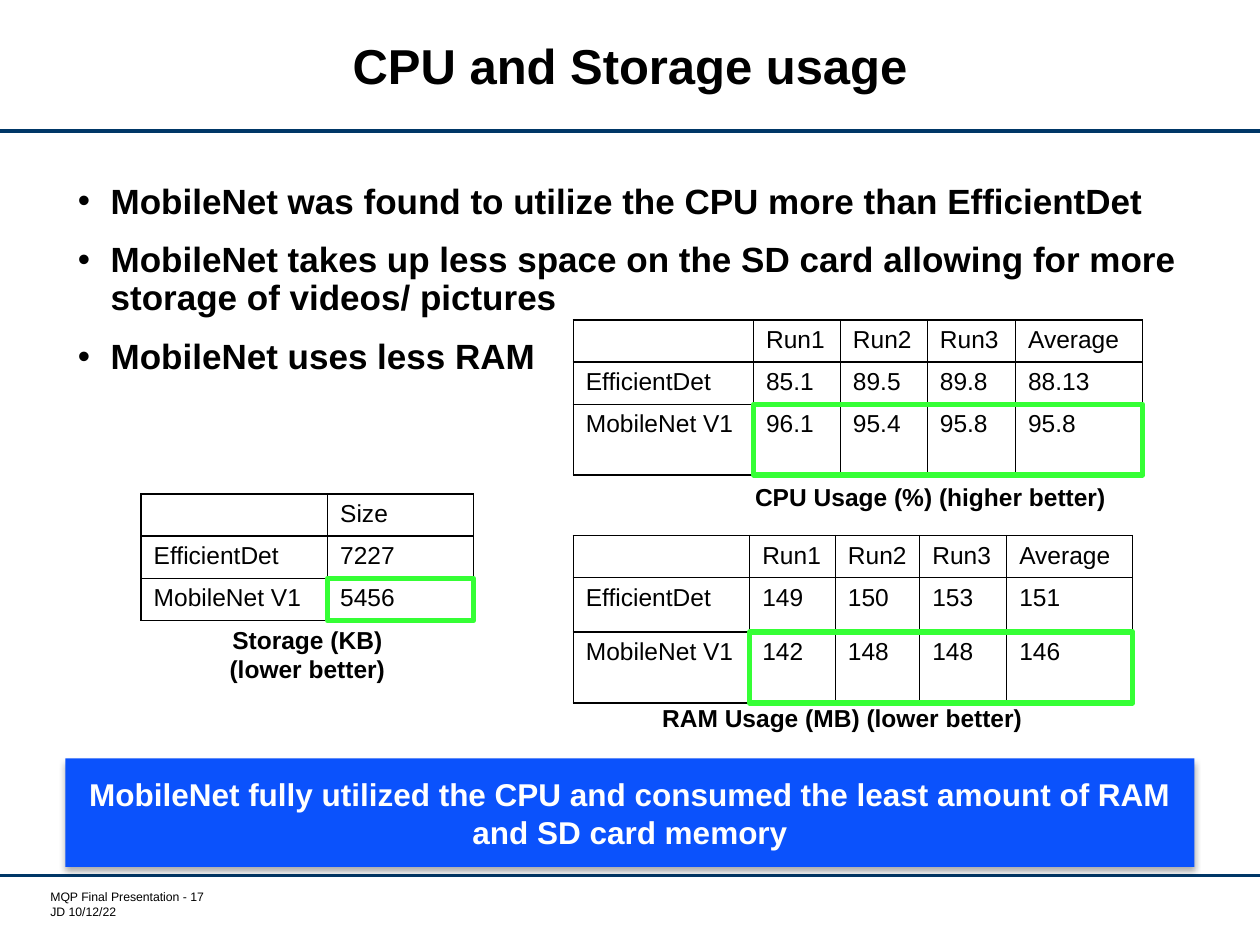
from dataclasses import dataclass
from lxml import etree
from pptx import Presentation
from pptx import util as u
from pptx.dml.color import RGBColor
from pptx.enum import shapes, text
from pptx.oxml import parse_xml
from pptx.oxml.ns import qn

COLS, ROWS = 100, 75
NS = 'xmlns:a="http://schemas.openxmlformats.org/drawingml/2006/main"'
BLACK, WHITE, NAVY, BLUE, GREEN = "000000", "FFFFFF", "003767", "0B52FC", "35FF35"
LEFT, MID = text.PP_ALIGN.LEFT, text.PP_ALIGN.CENTER

deck = Presentation()
deck.slide_width, deck.slide_height = u.Inches(10), u.Inches(7.5)
slide = deck.slides.add_slide(deck.slide_layouts[5])


@dataclass
class Box:
    x: float
    y: float
    w: float
    h: float

    def emu(self) -> list[int]:
        wide, high = deck.slide_width / COLS, deck.slide_height / ROWS
        return [round(self.x * wide), round(self.y * high),
                round(self.w * wide), round(self.h * high)]


@dataclass
class Grid:
    x: float
    y: float
    cols: list[float]
    rows: list[float]
    head: list[str]
    data: list[list[str]]

    def box(self) -> Box:
        return Box(self.x, self.y, sum(self.cols), sum(self.rows))

    def best(self) -> Box:
        return Box(self.x + self.cols[0], self.y + sum(self.rows[:-1]),
                   sum(self.cols[1:]), self.rows[-1])


@dataclass
class Label:
    box: Box
    lines: list[str]


def tint(code: str) -> RGBColor:
    return RGBColor.from_string(code)


def add_run(para, words: str, size: float, bold: bool = False, code: str = BLACK) -> None:
    run = para.add_run()
    run.text = words
    run.font.name, run.font.size, run.font.bold = "Arial", u.Pt(size), bold
    run.font.color.rgb = tint(code)


def write(frame, lines: list[str], size: float, bold: bool = True,
          code: str = BLACK, side=MID) -> list:
    frame.word_wrap = True
    paras = [frame.paragraphs[0]] + [frame.add_paragraph() for _ in lines[1:]]
    for para, words in zip(paras, lines):
        para.alignment = side
        add_run(para, words, size, bold, code)
    return paras


def add_text(box: Box, lines: list[str], size: float, **look):
    frame = slide.shapes.add_textbox(*box.emu()).text_frame
    return frame, write(frame, lines, size, **look)


def add_rule(row: float) -> None:
    x, y, w, _ = Box(0, row, COLS, 0).emu()
    rule = slide.shapes.add_connector(shapes.MSO_CONNECTOR.STRAIGHT, x, y, x + w, y)
    rule.line.color.rgb, rule.line.width = tint(NAVY), u.Pt(1.75)
    etree.SubElement(rule._element.spPr, qn("a:effectLst"))


def add_rect(box: Box):
    rect = slide.shapes.add_shape(shapes.MSO_SHAPE.RECTANGLE, *box.emu())
    rect.shadow.inherit = False
    return rect


def add_edges(cell) -> None:
    props = cell._tc.get_or_add_tcPr()
    for spot, side in enumerate(("lnL", "lnR", "lnT", "lnB")):
        props.insert(spot, parse_xml(
            f'<a:{side} {NS} w="12700"><a:solidFill><a:srgbClr val="{BLACK}"/>'
            f'</a:solidFill></a:{side}>'))


def add_grid(grid: Grid) -> None:
    cells = [grid.head] + grid.data
    table = slide.shapes.add_table(len(grid.rows), len(grid.cols), *grid.box().emu()).table
    table.first_row = table.horz_banding = False
    for col, wide in zip(table.columns, grid.cols):
        col.width = Box(0, 0, wide, 0).emu()[2]
    for r, line in enumerate(cells):
        table.rows[r].height = Box(0, 0, 0, grid.rows[r]).emu()[3]
        for c, words in enumerate(line):
            cell = table.cell(r, c)
            cell.fill.background()
            add_edges(cell)
            para = cell.text_frame.paragraphs[0]
            if words:
                add_run(para, words, 14)
            else:
                etree.SubElement(para._p, qn("a:endParaRPr"), sz="1400")


def add_mark(box: Box) -> None:
    mark = add_rect(box)
    mark.fill.background()
    mark.line.color.rgb, mark.line.width = tint(GREEN), u.Pt(3)


def add_points(box: Box, lines: list[str]) -> None:
    _, paras = add_text(box, lines, 20, side=LEFT)
    for spot, para in enumerate(paras):
        props = para._p.get_or_add_pPr()
        props.set("marL", str(u.Inches(0.26)))
        props.set("indent", str(-u.Inches(0.26)))
        etree.SubElement(props, qn("a:buFont"), typeface="Arial")
        etree.SubElement(props, qn("a:buChar"), char="•")
        para.line_spacing = 0.9
        if spot:
            para.space_before = u.Pt(12)


def add_banner(box: Box, words: str) -> None:
    rect = add_rect(box)
    rect.fill.solid()
    rect.fill.fore_color.rgb = tint(BLUE)
    rect.line.fill.background()
    rect.text_frame.vertical_anchor = text.MSO_ANCHOR.MIDDLE
    write(rect.text_frame, [words], 18, code=WHITE)
    rect._element.spPr.find(qn("a:effectLst")).append(parse_xml(
        f'<a:outerShdw {NS} blurRad="{u.Pt(3.5)}" dist="{u.Pt(2.2)}" dir="5400000" '
        f'rotWithShape="0"><a:srgbClr val="{BLACK}"><a:alpha val="32000"/></a:srgbClr>'
        '</a:outerShdw>'))


def add_title(box: Box, words: str) -> None:
    title = slide.shapes.title
    title.left, title.top, title.width, title.height = box.emu()
    title.text_frame.vertical_anchor = text.MSO_ANCHOR.MIDDLE
    write(title.text_frame, [words], 28)[0].line_spacing = u.Pt(28)


def add_foot(box: Box, lines: list[str]) -> None:
    frame, _ = add_text(box, lines, 7, bold=False, side=LEFT)
    frame.margin_left = u.Inches(0.05)
    frame.margin_top = frame.margin_right = frame.margin_bottom = 0


RUNS = ["", "Run1", "Run2", "Run3", "Average"]
NAMES = ["EfficientDet", "MobileNet V1"]
GRIDS = [
    Grid(45.5, 25.4, [14.3, 6.9, 6.9, 7, 10.1], [3.35, 3.35, 5.6], RUNS,
         [[NAMES[0], "85.1", "89.5", "89.8", "88.13"],
          [NAMES[1], "96.1", "95.4", "95.8", "95.8"]]),
    Grid(11.2, 39.2, [14.8, 11.6], [3.35] * 3, ["", "Size"],
         [[NAMES[0], "7227"], [NAMES[1], "5456"]]),
    Grid(45.5, 42.5, [14, 6.8, 6.7, 6.9, 10], [3.35, 4.3, 5.65], RUNS,
         [[NAMES[0], "149", "150", "153", "151"],
          [NAMES[1], "142", "148", "148", "146"]]),
]
LABELS = [
    Label(Box(58, 37.8, 31.7, 5.7), ["CPU Usage (%) (higher better)"]),
    Label(Box(16.6, 49.1, 15.6, 5.7), ["Storage (KB)", "(lower better)"]),
    Label(Box(51, 55.3, 31.7, 5.7), ["RAM Usage (MB) (lower better)"]),
]

for row in (10.4, 69.5):
    add_rule(row)
add_foot(Box(3.5, 70.6, 13.9, 2.4), ["MQP Final Presentation - 17", "JD 10/12/22"])
add_points(Box(5.2, 14.1, 89.6, 52.8), [
    "MobileNet was found to utilize the CPU more than EfficientDet",
    "MobileNet takes up less space on the SD card allowing for more "
    "storage of videos/ pictures",
    "MobileNet uses less RAM"])
add_title(Box(10.3, 1.1, 79.4, 8.9), "CPU and Storage usage")
for label in LABELS:
    add_text(label.box, label.lines, 14)
for grid in GRIDS:
    add_grid(grid)
add_banner(Box(5.2, 60.2, 89.6, 8.6),
           "MobileNet fully utilized the CPU and consumed the least amount of RAM "
           "and SD card memory")
for grid in GRIDS:
    add_mark(grid.best())

deck.save("out.pptx")
